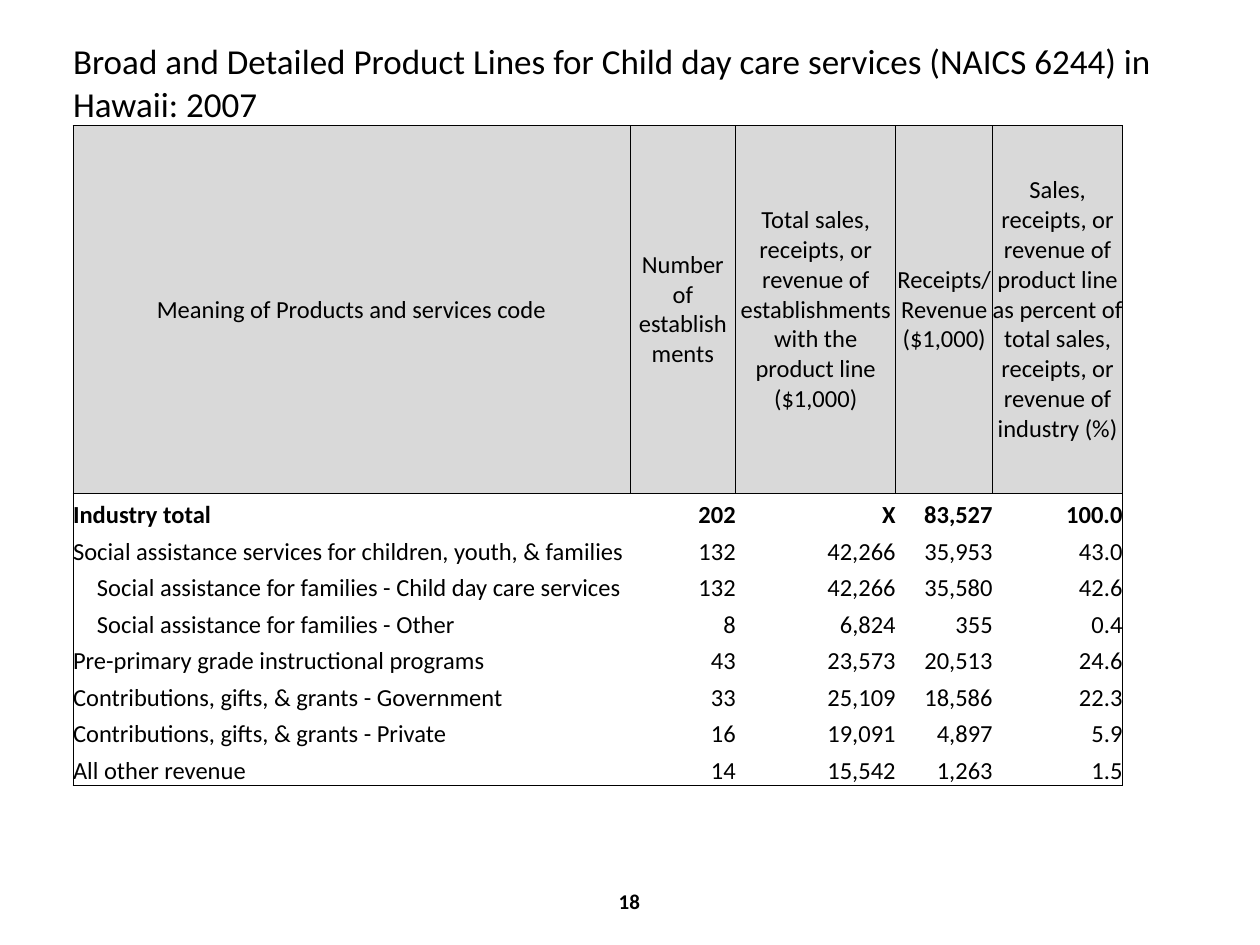
from lxml.etree import SubElement
from pptx import Presentation
from pptx.dml.color import RGBColor
from pptx.enum.text import MSO_ANCHOR as Anchor, PP_ALIGN as Align
from pptx.oxml.ns import qn
from pptx.util import Inches, Pt

COLORS = {"text": "000000", "line": "000000", "header": "D9D9D9"}
TITLE = ("Broad and Detailed Product Lines for Child day care services "
         "(NAICS 6244) in Hawaii: 2007")
HEADERS = [
    "Meaning of Products and services code",
    "Number of establishments",
    "Total sales, receipts, or revenue of establishments with the product line ($1,000)",
    "Receipts/Revenue ($1,000)",
    "Sales, receipts, or revenue of product line as percent of total sales, "
    "receipts, or revenue of industry (%)",
]
PRODUCT_LINES = [
    ["Industry total", "202", "X", "83,527", "100.0"],
    ["Social assistance services for children, youth, & families",
     "132", "42,266", "35,953", "43.0"],
    ["Social assistance for families - Child day care services",
     "132", "42,266", "35,580", "42.6"],
    ["Social assistance for families - Other", "8", "6,824", "355", "0.4"],
    ["Pre-primary grade instructional programs", "43", "23,573", "20,513", "24.6"],
    ["Contributions, gifts, & grants - Government", "33", "25,109", "18,586", "22.3"],
    ["Contributions, gifts, & grants - Private", "16", "19,091", "4,897", "5.9"],
    ["All other revenue", "14", "15,542", "1,263", "1.5"],
]
INDENTED_ROWS = (4, 5)
COLUMN_WIDTHS = [4.42, 0.84, 1.27, 0.77, 1.03, 0.84]
ROW_HEIGHTS = [0.4, 2.92] + [0.29] * len(PRODUCT_LINES)


def add_text(paragraph, text, size, bold=False, align=Align.LEFT):
    paragraph.alignment = align
    run = paragraph.add_run()
    run.text = text
    run.font.name = "Calibri"
    run.font.size = Pt(size)
    run.font.bold = bold
    run.font.color.rgb = RGBColor.from_string(COLORS["text"])


def set_borders(cell, drawn_sides):
    properties = cell._tc.get_or_add_tcPr()
    for position, side in enumerate("LRTB"):
        line = properties.makeelement(qn(f"a:ln{side}"), {"w": str(Pt(0.5))})
        properties.insert(position, line)
        if side in drawn_sides:
            fill = SubElement(line, qn("a:solidFill"))
            SubElement(fill, qn("a:srgbClr"), val=COLORS["line"])
        else:
            SubElement(line, qn("a:noFill"))


presentation = Presentation()
presentation.slide_width = Inches(10)
presentation.slide_height = Inches(7.5)
slide = presentation.slides.add_slide(presentation.slide_layouts[6])

page_number = slide.shapes.add_textbox(
    Inches(3.83), Inches(6.95), Inches(2.33), Inches(0.4)).text_frame
page_number.word_wrap = True
page_number.vertical_anchor = Anchor.MIDDLE
add_text(page_number.paragraphs[0], "18", 12, True, Align.CENTER)

table = slide.shapes.add_table(
    len(ROW_HEIGHTS), len(COLUMN_WIDTHS), Inches(0.58), Inches(0.33),
    Inches(sum(COLUMN_WIDTHS)), Inches(sum(ROW_HEIGHTS))).table
table.first_row = False
table.horz_banding = False
for column, width in zip(table.columns, COLUMN_WIDTHS):
    column.width = Inches(width)
for row, height in zip(table.rows, ROW_HEIGHTS):
    row.height = Inches(height)
table.cell(0, 0).merge(table.cell(0, len(COLUMN_WIDTHS) - 1))

last_row = len(ROW_HEIGHTS) - 1
last_column = len(HEADERS) - 1
for row_index, texts in enumerate([[TITLE], HEADERS] + PRODUCT_LINES):
    for column_index in range(len(COLUMN_WIDTHS)):
        cell = table.cell(row_index, column_index)
        cell.margin_left = cell.margin_right = 0
        cell.margin_top = cell.margin_bottom = 0
        cell.vertical_anchor = Anchor.BOTTOM
        cell.fill.background()
        paragraph = cell.text_frame.paragraphs[0]
        if column_index >= len(texts):
            SubElement(paragraph._p, qn("a:endParaRPr"), sz="1400")
            set_borders(cell, "L" if row_index and column_index > last_column else "")
            continue
        text = texts[column_index]
        if row_index == 0:
            add_text(paragraph, text, 20)
            set_borders(cell, "B")
        elif row_index == 1:
            cell.vertical_anchor = Anchor.MIDDLE
            cell.fill.solid()
            cell.fill.fore_color.rgb = RGBColor.from_string(COLORS["header"])
            add_text(paragraph, text, 14, align=Align.CENTER)
            set_borders(cell, "LRTB")
        else:
            if column_index == 0 and row_index in INDENTED_ROWS:
                cell.margin_left = Inches(0.19)
            align = Align.RIGHT if column_index else Align.LEFT
            add_text(paragraph, text, 14, row_index == 2, align)
            edges = {"L": column_index == 0, "R": column_index == last_column,
                     "T": row_index == 2, "B": row_index == last_row}
            set_borders(cell, [side for side, drawn in edges.items() if drawn])

presentation.save("out.pptx")
